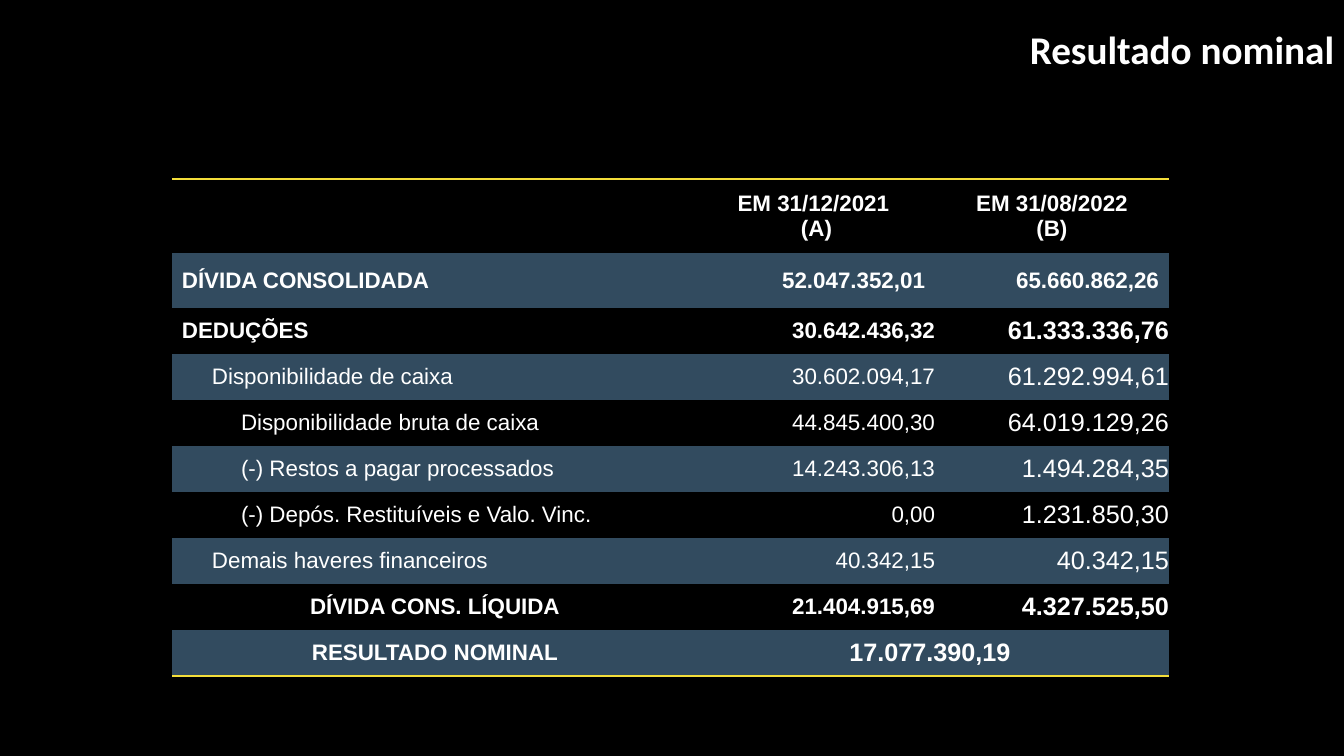
from lxml.etree import SubElement
from pptx import Presentation
from pptx.dml.color import RGBColor
from pptx.enum.text import MSO_ANCHOR as Anchor, PP_ALIGN as Align
from pptx.oxml.ns import qn
from pptx.util import Pt

SCALE = 914400 / 100.8
WHITE, BLACK, BLUE, GOLD = "FFFFFF", "000000", "324B5F", "F4DE3A"
PLAIN_STYLE = "{2D5ABB26-0587-4C30-8999-92F81FD0307C}"
LEFT, MID, RIGHT = Align.LEFT, Align.CENTER, Align.RIGHT


def px(n):
    return round(n * SCALE)


def write(frame, lines, size, bold, align, font="Arial", indent=0):
    """Fill a text frame with one paragraph per line."""
    for i, line in enumerate(lines):
        para = frame.add_paragraph() if i else frame.paragraphs[0]
        para.alignment = align
        if indent:
            props = para._p.get_or_add_pPr()
            props.set("marL", str(px(indent)))
            props.set("indent", "0")
        run = para.add_run()
        run.text = line
        run.font.name = font
        run.font.size = Pt(size)
        run.font.bold = bold
        run.font.color.rgb = RGBColor.from_string(WHITE)


deck = Presentation()
deck.slide_width, deck.slide_height = px(1344), px(756)
slide = deck.slides.add_slide(deck.slide_layouts[6])
back = slide.background.fill
back.solid()
back.fore_color.rgb = RGBColor.from_string(BLACK)

title = slide.shapes.add_textbox(px(495), px(20), px(849), px(57)).text_frame
title.word_wrap = True
write(title, ["Resultado nominal"], 28, True, RIGHT, "Calibri")

# label, value A, value B, bold, label alignment, label indent
rows = [
    ("", "EM 31/12/2021 \n(A)", "EM 31/08/2022\n(B)", True, LEFT, 0),
    ("DÍVIDA CONSOLIDADA", "52.047.352,01", "65.660.862,26", True, LEFT, 0),
    ("DEDUÇÕES", "30.642.436,32", "61.333.336,76", True, LEFT, 10),
    ("Disponibilidade de caixa", "30.602.094,17", "61.292.994,61",
     False, LEFT, 40),
    ("Disponibilidade bruta de caixa", "44.845.400,30", "64.019.129,26",
     False, LEFT, 69),
    ("(-) Restos a pagar processados", "14.243.306,13", "1.494.284,35",
     False, LEFT, 69),
    ("(-) Depós. Restituíveis e Valo. Vinc.", "0,00", "1.231.850,30",
     False, LEFT, 69),
    ("Demais haveres financeiros", "40.342,15", "40.342,15", False, LEFT, 40),
    ("DÍVIDA CONS. LÍQUIDA", "21.404.915,69", "4.327.525,50", True, MID, 0),
    ("RESULTADO NOMINAL", "17.077.390,19 ", "", True, MID, 0),
]
widths = [526, 237, 234]
heights = [74, 55] + [46] * 8
last = len(rows) - 1

table = slide.shapes.add_table(len(rows), 3, px(172), px(179),
                               px(sum(widths)), px(sum(heights))).table
table.first_row = table.horz_banding = False
table._tbl.tblPr.find(qn("a:tableStyleId")).text = PLAIN_STYLE
for col, width in zip(table.columns, widths):
    col.width = px(width)
for row, height in zip(table.rows, heights):
    row.height = px(height)
table.cell(last, 1).merge(table.cell(last, 2))

for r, (label, old, new, bold, side, indent) in enumerate(rows):
    for c, text in enumerate((label, old, new)):
        cell = table.cell(r, c)
        cell.vertical_anchor = Anchor.MIDDLE
        wide, high = (10, 5) if r < 2 else (0, 0)
        cell.margin_left = cell.margin_right = px(wide)
        cell.margin_top = cell.margin_bottom = px(high)

        if r in (0, last):
            tag = "a:lnB" if r else "a:lnT"
            edge = SubElement(cell._tc.get_or_add_tcPr(), qn(tag), w="12700")
            paint = SubElement(edge, qn("a:solidFill"))
            SubElement(paint, qn("a:srgbClr"), val=GOLD)
        if r % 2:
            cell.fill.solid()
            cell.fill.fore_color.rgb = RGBColor.from_string(BLUE)
        else:
            cell.fill.background()

        if text:
            big = r > 1 and (c == 2 or r == last and c == 1)
            align = side if c == 0 else MID if r in (0, last) else RIGHT
            write(cell.text_frame, text.split("\n"), 18 if big else 16, bold,
                  align, indent=0 if c else indent)

deck.save("out.pptx")
